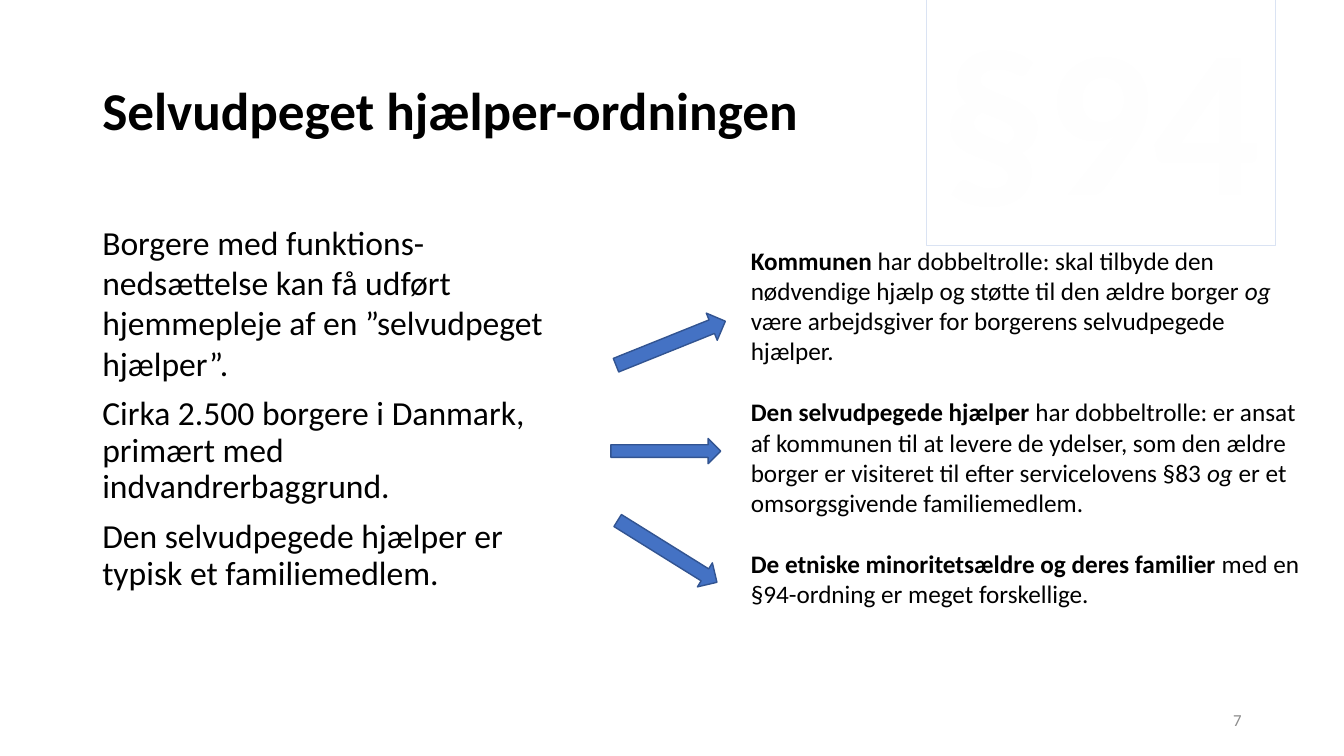
from lxml import etree
from pptx import Presentation
from pptx import util as u
from pptx.dml.color import RGBColor
from pptx.enum import shapes, text
from pptx.oxml import parse_xml
from pptx.oxml.ns import nsdecls, qn

COLORS = {
    "text": "000000", "white": "FFFFFF", "frame": "DAE3F3", "sign": "FEFEFE",
    "blue": "4472C4", "edge": "325491", "number": "8C8C8C",
}
FACTS = [
    "Borgere med funktions-nedsættelse kan få udført hjemmepleje af en ”selvudpeget hjælper”.",
    "Cirka 2.500 borgere i Danmark, primært med indvandrerbaggrund.",
    "Den selvudpegede hjælper er typisk et familiemedlem.",
]
ROLES = [
    [("Kommunen ", "bold"),
     ("har dobbeltrolle: skal tilbyde den nødvendige hjælp og støtte til den ældre borger ", ""),
     ("og ", "italic"),
     ("være arbejdsgiver for borgerens selvudpegede hjælper.", "")],
    [("Den selvudpegede hjælper ", "bold"),
     ("har dobbeltrolle: er ansat af kommunen til at levere de ydelser, som den ældre borger "
      "er visiteret til efter servicelovens §83 ", ""),
     ("og ", "italic"),
     ("er et omsorgsgivende familiemedlem.", "")],
    [("De etniske minoritetsældre og deres familier ", "bold"),
     ("med en §94-ordning er meget forskellige.", "")],
]
ARROWS = [
    ((437, 234.7, 84.2, 20.9), 338.1),
    ((436.3, 313.2, 78.5, 18), 0),
    ((434.9, 383.8, 83.5, 20.2), 31.9),
]


def color(name):
    """Return the named colour."""
    return RGBColor.from_string(COLORS[name])


def style(span, size, name="text", bold=False, italic=False):
    """Format one run."""
    font = span.font
    font.name, font.size, font.bold, font.italic = "Calibri", u.Pt(size), bold, italic
    font.color.rgb = color(name)


def add_shape(page, kind, box, fill, line, width):
    """Add a filled, outlined shape without shadow."""
    shape = page.shapes.add_shape(kind, *map(u.Pt, box))
    shape.shadow.inherit = False
    shape.fill.solid()
    shape.fill.fore_color.rgb = color(fill)
    shape.line.color.rgb = color(line)
    shape.line.width = u.Pt(width)
    return shape


def add_text(page, box, anchor=text.MSO_ANCHOR.TOP):
    """Add a wrapping text box and return its frame."""
    frame = page.shapes.add_textbox(*map(u.Pt, box)).text_frame
    frame.word_wrap = True
    frame.vertical_anchor = anchor
    return frame


def add_line(page, box, words, size, name="text", bold=False, align=text.PP_ALIGN.LEFT):
    """Place one vertically centred line of text."""
    frame = add_text(page, box, text.MSO_ANCHOR.MIDDLE)
    frame.text = words
    para = frame.paragraphs[0]
    para.alignment = align
    para.line_spacing = 0.9
    style(para.runs[0], size, name, bold)


def add_sign(page, box):
    """Draw the framed paragraph sign with outlined, shadowed letters."""
    frame = add_shape(page, shapes.MSO_SHAPE.RECTANGLE, box, "white", "frame", 0.75).text_frame
    frame.word_wrap = True
    frame.vertical_anchor = text.MSO_ANCHOR.TOP
    frame.text = "§94"
    para = frame.paragraphs[0]
    para.alignment = text.PP_ALIGN.CENTER
    span = para.runs[0]
    style(span, 150, "sign", True)
    props = span.font._element
    props.set("spc", "50")
    fill = f'<a:srgbClr val="{COLORS["blue"]}"/>'
    props.insert(0, parse_xml(
        f'<a:ln {nsdecls("a")} w="9525"><a:solidFill>{fill}</a:solidFill></a:ln>'))
    props.find(qn("a:solidFill")).addnext(parse_xml(
        f'<a:effectLst {nsdecls("a")}><a:outerShdw blurRad="0" dist="38100" dir="2700000">'
        f'{fill}</a:outerShdw></a:effectLst>'))


def add_facts(page, box):
    """List the facts about the scheme."""
    frame = add_text(page, box)
    frame.text = "\n".join(FACTS)
    for index, para in enumerate(frame.paragraphs):
        if index:
            para.space_before = u.Pt(10)
            para.line_spacing = 0.9
        style(para.runs[0], 24)


def add_roles(page, box):
    """Describe the roles of those involved."""
    frame = add_text(page, box)
    for index, role in enumerate(ROLES):
        para = frame.add_paragraph() if index else frame.paragraphs[0]
        if index:
            para.space_before = u.Pt(22)
        for words, look in role:
            span = para.add_run()
            span.text = words
            style(span, 18, bold=look == "bold", italic=look == "italic")


def add_arrows(page):
    """Point from the facts to the roles."""
    for box, angle in ARROWS:
        arrow = add_shape(page, shapes.MSO_SHAPE.RIGHT_ARROW, box, "blue", "edge", 1)
        arrow.rotation = angle


def main():
    """Build and save the deck."""
    deck = Presentation()
    deck.slide_width, deck.slide_height = u.Pt(960), u.Pt(540)
    page = deck.slides.add_slide(deck.slide_layouts[6])
    add_sign(page, (661.7, -13.7, 249.1, 189.4))
    add_line(page, (66, 28.8, 828, 104.4), "Selvudpeget hjælper-ordningen", 38, bold=True)
    add_facts(page, (66, 154.8, 330, 335.5))
    add_roles(page, (529.2, 171.4, 414, 269.3))
    add_arrows(page)
    add_line(page, (678, 500.4, 216, 28.8), "7", 12, "number", align=text.PP_ALIGN.RIGHT)
    deck.save("out.pptx")


if __name__ == "__main__":
    main()
